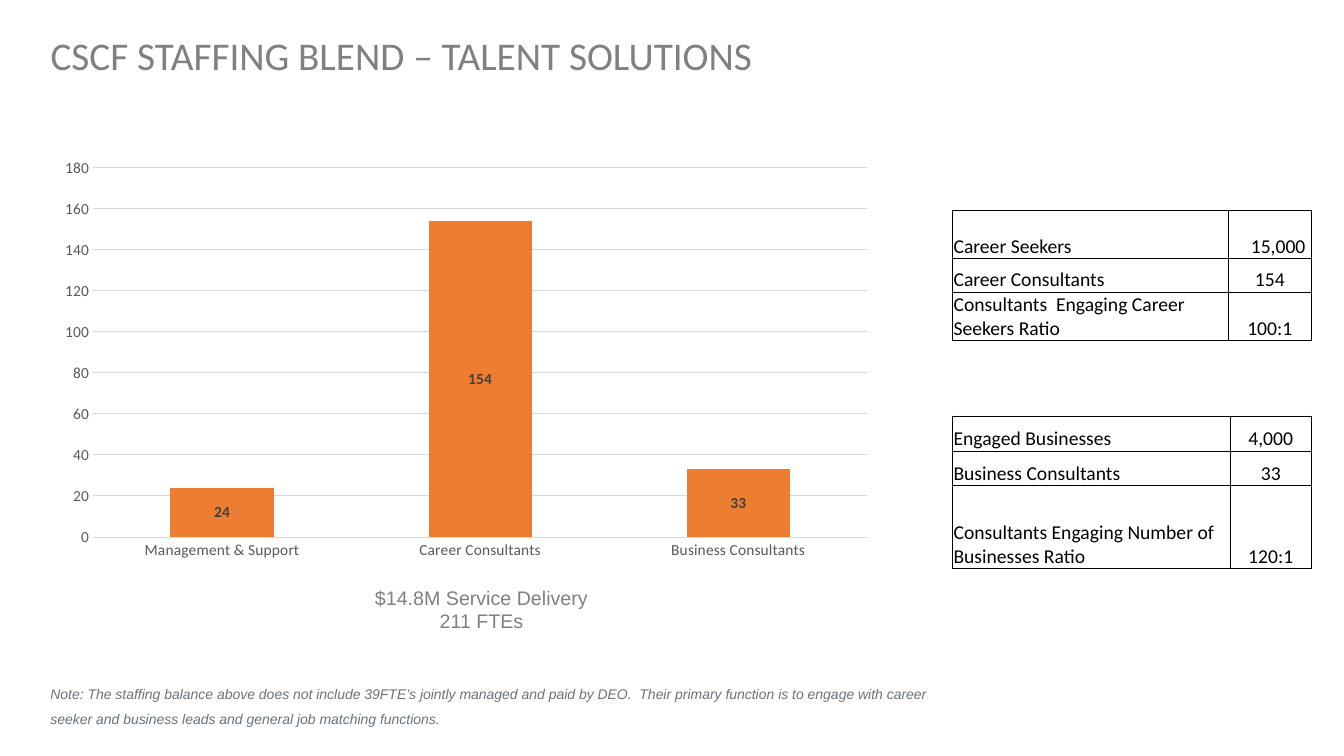
from lxml import etree
from pptx import Presentation
from pptx.chart.data import CategoryChartData
from pptx.dml.color import RGBColor
from pptx.enum.chart import XL_CHART_TYPE, XL_LABEL_POSITION, XL_TICK_MARK
from pptx.enum.text import MSO_ANCHOR, MSO_AUTO_SIZE, PP_ALIGN
from pptx.oxml.ns import qn
from pptx.util import Cm, Pt

STACKED = XL_CHART_TYPE.COLUMN_STACKED
LABEL_CENTER = XL_LABEL_POSITION.CENTER
NO_TICK = XL_TICK_MARK.NONE
BOTTOM, MIDDLE = MSO_ANCHOR.BOTTOM, MSO_ANCHOR.MIDDLE
FIXED, GROW = MSO_AUTO_SIZE.NONE, MSO_AUTO_SIZE.SHAPE_TO_FIT_TEXT
LEFT, CENTER, RIGHT = PP_ALIGN.LEFT, PP_ALIGN.CENTER, PP_ALIGN.RIGHT

BLACK = RGBColor(0x00, 0x00, 0x00)
HEADING_GRAY = RGBColor(0x80, 0x80, 0x80)
NOTE_GRAY = RGBColor(0x6A, 0x73, 0x7B)
AXIS_GRAY = RGBColor(0x59, 0x59, 0x59)
LABEL_GRAY = RGBColor(0x40, 0x40, 0x40)
GRID_GRAY = RGBColor(0xD9, 0xD9, 0xD9)
ORANGE = RGBColor(0xED, 0x7D, 0x31)

TITLE = "CSCF STAFFING BLEND – TALENT SOLUTIONS"
NOTE = ("Note: The staffing balance above does not include 39FTE’s jointly managed "
        "and paid by DEO.  Their primary function is to engage with career seeker "
        "and business leads and general job matching functions.")
STAFF = {"Management & Support": 24, "Career Consultants": 154,
         "Business Consultants": 33}
SEEKER_ROWS = [("Career Seekers", "15,000", RIGHT),
               ("Career Consultants", "154", CENTER),
               ("Consultants  Engaging Career Seekers Ratio", "100:1", CENTER)]
BUSINESS_ROWS = [("Engaged Businesses", "4,000", CENTER),
                 ("Business Consultants", "33", CENTER),
                 ("Consultants Engaging Number of Businesses Ratio", "120:1", CENTER)]


def set_font(font, name, size, color, bold=False, italic=False):
    font.name = name
    font.size = Pt(size)
    font.bold = bold
    font.italic = italic
    font.color.rgb = color


def set_title(slide, text):
    title = slide.shapes.title
    title.left, title.top, title.width, title.height = Cm(1.02), Cm(0.79), Cm(31.75), Cm(1.32)
    frame = title.text_frame
    frame.text = text
    frame.auto_size = FIXED
    frame.vertical_anchor = MIDDLE
    paragraph = frame.paragraphs[0]
    paragraph.alignment = LEFT
    paragraph.line_spacing = 0.9
    set_font(paragraph.font, "Calibri", 28, HEADING_GRAY)


def add_text(slide, position, lines, size, color, alignment=LEFT, spacing=1.0,
             italic=False, wrap=True):
    frame = slide.shapes.add_textbox(*position).text_frame
    frame.word_wrap = wrap
    frame.auto_size = GROW
    frame.text = "\n".join(lines)
    for paragraph in frame.paragraphs:
        paragraph.alignment = alignment
        paragraph.line_spacing = spacing
        set_font(paragraph.font, "Arial", size, color, italic=italic)


def set_line(line, color):
    line.color.rgb = color
    line.width = Pt(0.75)


def add_staff_chart(slide):
    data = CategoryChartData()
    data.categories = list(STAFF)
    data.add_series("Series 1", list(STAFF.values()))
    chart = slide.shapes.add_chart(STACKED, Cm(1.22), Cm(3.78), Cm(21.06), Cm(10.54),
                                   data).chart
    chart.has_legend = False
    chart.has_title = False
    set_font(chart.font, "Calibri", 11, BLACK)

    for axis in (chart.category_axis, chart.value_axis):
        axis.major_tick_mark = axis.minor_tick_mark = NO_TICK
        set_font(axis.tick_labels.font, "Calibri", 11, AXIS_GRAY)
    set_line(chart.category_axis.format.line, GRID_GRAY)
    value_axis = chart.value_axis
    value_axis.minimum_scale, value_axis.maximum_scale, value_axis.major_unit = 0, 180, 20
    value_axis.format.line.fill.background()
    set_line(value_axis.major_gridlines.format.line, GRID_GRAY)

    plot = chart.plots[0]
    plot.vary_by_categories = False
    plot.gap_width = 150
    plot.overlap = 100
    series = plot.series[0]
    series.format.fill.solid()
    series.format.fill.fore_color.rgb = ORANGE
    labels = series.data_labels
    labels.show_value = True
    labels.position = LABEL_CENTER
    set_font(labels.font, "Calibri", 11, LABEL_GRAY, bold=True)


def add_borders(cell, outer_sides):
    """Draw 1 pt lines on the outer sides of the table and 0.5 pt lines inside it."""
    properties = cell._tc.get_or_add_tcPr()
    for side in "LRTB":
        width = Pt(1) if side in outer_sides else Pt(0.5)
        line = etree.SubElement(properties, qn(f"a:ln{side}"), w=str(width))
        fill = etree.SubElement(line, qn("a:solidFill"))
        etree.SubElement(fill, qn("a:srgbClr"), val=str(BLACK))


def fill_cell(cell, text, alignment, outer_sides):
    cell.margin_left = cell.margin_top = Cm(0.03)
    cell.margin_right = Cm(0.15) if alignment == RIGHT else Cm(0.03)
    cell.margin_bottom = 0
    cell.vertical_anchor = BOTTOM
    cell.text = text
    paragraph = cell.text_frame.paragraphs[0]
    paragraph.alignment = alignment
    set_font(paragraph.font, "Calibri", 14, BLACK)
    add_borders(cell, outer_sides)
    cell.fill.background()


def add_ratio_table(slide, top, widths, heights, rows):
    table = slide.shapes.add_table(len(rows), len(widths), Cm(24), top,
                                   sum(widths), sum(heights)).table
    table.first_row = table.horz_banding = False
    for column, width in zip(table.columns, widths):
        column.width = width
    for index, (name, value, alignment) in enumerate(rows):
        table.rows[index].height = heights[index]
        ends = ("T" if index == 0 else "") + ("B" if index == len(rows) - 1 else "")
        fill_cell(table.cell(index, 0), name, LEFT, ends + "L")
        fill_cell(table.cell(index, 1), value, alignment, ends + "R")


def main():
    presentation = Presentation()
    presentation.slide_width, presentation.slide_height = Cm(33.87), Cm(19.05)
    slide = presentation.slides.add_slide(presentation.slide_layouts[5])
    set_title(slide, TITLE)
    add_staff_chart(slide)
    add_text(slide, (Cm(9.19), Cm(14.63), Cm(5.89), Cm(1.45)),
             ["$14.8M Service Delivery", "211 FTEs"], 14, HEADING_GRAY,
             alignment=CENTER, wrap=False)
    add_ratio_table(slide, Cm(5.31), (Cm(6.95), Cm(2.1)),
                    (Cm(1.21), Cm(0.84), Cm(1.21)), SEEKER_ROWS)
    add_ratio_table(slide, Cm(10.49), (Cm(7), Cm(2.05)),
                    (Cm(0.87), Cm(0.87), Cm(2.1)), BUSINESS_ROWS)
    add_text(slide, (Cm(1.02), Cm(16.94), Cm(23.57), Cm(1.45)), [NOTE], 10, NOTE_GRAY,
             spacing=1.5, italic=True)
    presentation.save("out.pptx")


if __name__ == "__main__":
    main()
